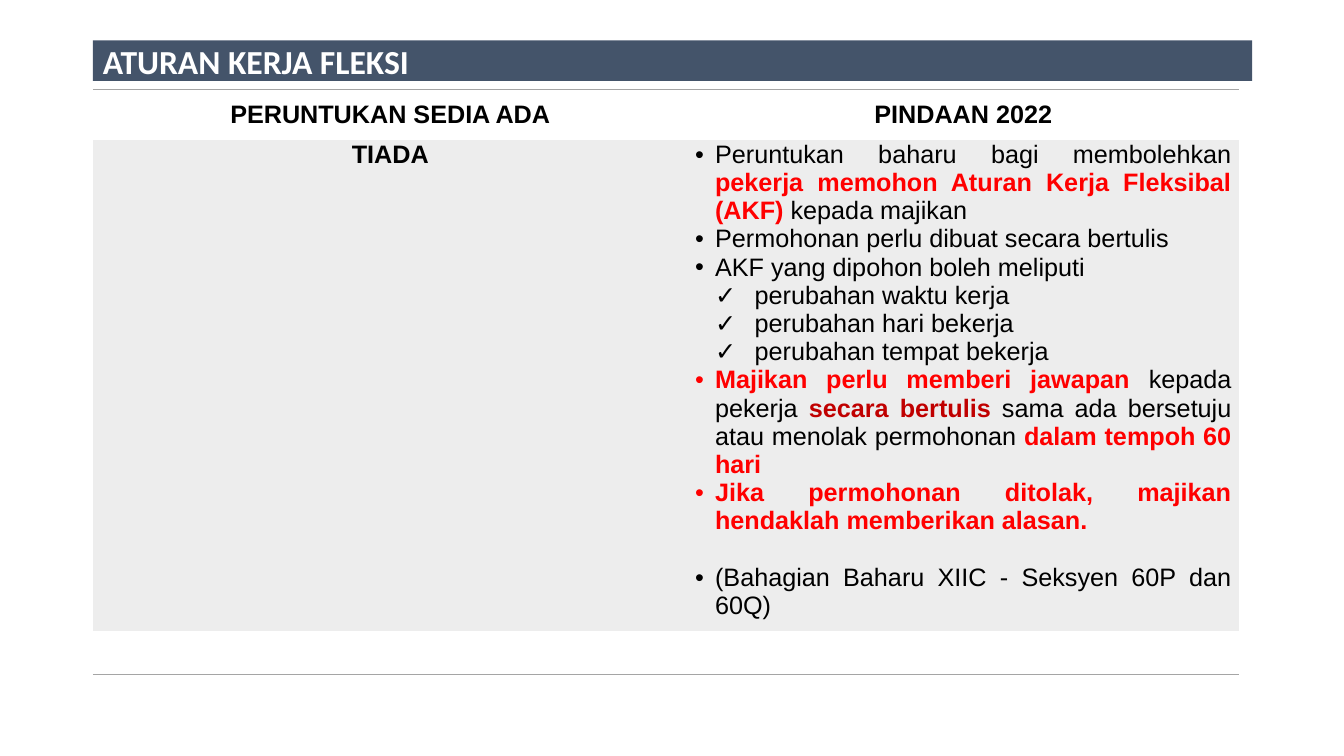
from lxml.etree import SubElement
from pptx import Presentation
from pptx.dml.color import RGBColor
from pptx.enum.shapes import MSO_SHAPE
from pptx.enum.text import MSO_ANCHOR, PP_ALIGN
from pptx.oxml import parse_xml
from pptx.oxml.ns import nsdecls, qn
from pptx.util import Pt

BLACK = RGBColor(0, 0, 0)
WHITE = RGBColor(255, 255, 255)
RED = RGBColor(255, 0, 0)
DARK = RGBColor(0xC0, 0, 0)
NAVY = RGBColor(0x44, 0x54, 0x6A)
GREY = RGBColor(0xA5, 0xA5, 0xA5)
PALE = RGBColor(0xED, 0xED, 0xED)
PLAIN = "{2D5ABB26-0587-4C30-8999-92F81FD0307C}"


def write(para, runs, name="Arial", size=18):
    for text, color, bold in runs:
        run = para.add_run()
        run.text = text
        look = {"name": name, "size": Pt(size), "bold": bold}
        for key, value in look.items():
            setattr(run.font, key, value)
        run.font.color.rgb = color


deck = Presentation()
deck.slide_width, deck.slide_height = Pt(960), Pt(540)
slide = deck.slides.add_slide(deck.slide_layouts[6])

frame = slide.shapes.add_table(3, 2, Pt(66.4), Pt(64.2), Pt(818.6), Pt(417.6))
table = frame.table
frame._element.find(".//" + qn("a:tableStyleId")).text = PLAIN
table.first_row = table.horz_banding = False
for column, width in zip(table.columns, (424.8, 393.8)):
    column.width = Pt(width)
for row, height in zip(table.rows, (36, 350.6, 31)):
    row.height = Pt(height)

sides = {0: "lnT", 2: "lnB"}
for index, row in enumerate(table.rows):
    for cell in row.cells:
        edges = {"margin_left": Pt(5.4), "margin_right": Pt(5.4),
                 "margin_top": 0, "margin_bottom": 0}
        for key, value in edges.items():
            setattr(cell, key, value)
        if index == 1:
            cell.fill.solid()
            cell.fill.fore_color.rgb = PALE
        else:
            cell.fill.background()
            cell._tc.get_or_add_tcPr().insert(0, parse_xml(
                f'<a:{sides[index]} {nsdecls("a")} w="{Pt(1)}"><a:solidFill>'
                f'<a:srgbClr val="{GREY}"/></a:solidFill></a:{sides[index]}>'))

heads = [(0, 0, "PERUNTUKAN SEDIA ADA"), (0, 1, "PINDAAN 2022"), (1, 0, "TIADA")]
for row, column, text in heads:
    cell = table.cell(row, column)
    cell.vertical_anchor = MSO_ANCHOR.TOP if row else MSO_ANCHOR.MIDDLE
    para = cell.text_frame.paragraphs[0]
    para.alignment = PP_ALIGN.CENTER
    write(para, [(text, BLACK, True)])

points = [
    ("•", [("Peruntukan baharu bagi membolehkan ", BLACK, False),
           ("pekerja memohon Aturan Kerja Fleksibal (AKF) ", RED, True),
           ("kepada majikan ", BLACK, False)]),
    ("•", [("Permohonan perlu dibuat secara bertulis ", BLACK, False)]),
    ("•", [("AKF yang dipohon boleh meliputi", BLACK, False)]),
    ("✓", [("perubahan waktu kerja ", BLACK, False)]),
    ("✓", [("perubahan hari bekerja", BLACK, False)]),
    ("✓", [("perubahan tempat bekerja", BLACK, False)]),
    ("•", [("Majikan perlu memberi jawapan ", RED, True),
           ("kepada pekerja ", BLACK, False),
           ("secara bertulis ", DARK, True),
           ("sama ada bersetuju atau menolak permohonan ", BLACK, False),
           ("dalam tempoh 60 hari", RED, True)]),
    ("•", [("Jika permohonan ditolak, majikan hendaklah memberikan alasan.", RED, True)]),
    ("•", [("(Bahagian Baharu XIIC - Seksyen 60P dan 60Q) ", BLACK, False)]),
]
indents = {"•": (14.2, -14.2), "✓": (42.5, -28.3)}
body = table.cell(1, 1).text_frame
for index, (mark, runs) in enumerate(points):
    para = body.add_paragraph() if index else body.paragraphs[0]
    para.alignment = PP_ALIGN.JUSTIFY
    if index == len(points) - 1:
        para.space_before = Pt(20.2)
    props = para._p.get_or_add_pPr()
    for key, value in zip(("marL", "indent"), indents[mark]):
        props.set(key, str(Pt(value)))
    SubElement(props, qn("a:buFont"), typeface="Arial")
    SubElement(props, qn("a:buChar"), char=mark)
    write(para, runs)

bar = slide.shapes.add_shape(MSO_SHAPE.RECTANGLE, Pt(66.4), Pt(28.8), Pt(828), Pt(29))
bar.shadow.inherit = False
bar.fill.solid()
bar.fill.fore_color.rgb = NAVY
bar.line.fill.background()
bar.text_frame.word_wrap = True
bar.text_frame.vertical_anchor = MSO_ANCHOR.MIDDLE
title = bar.text_frame.paragraphs[0]
title.alignment = PP_ALIGN.LEFT
write(title, [("ATURAN KERJA FLEKSI", WHITE, True)], "Calibri", 24)

deck.save("out.pptx")
